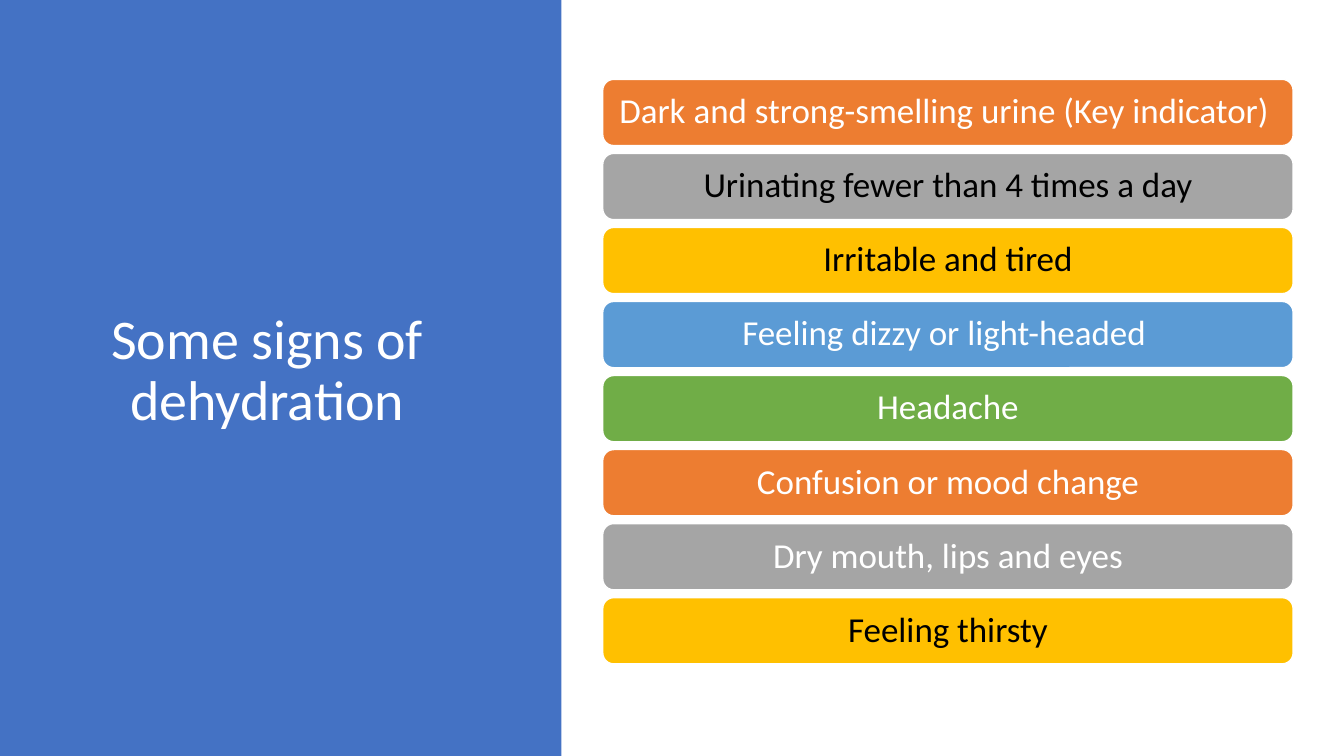
"""Builds a slide listing common signs of dehydration beside a title panel."""
from dataclasses import dataclass

from pptx import Presentation
from pptx.dml.color import RGBColor as Rgb
from pptx.enum.shapes import MSO_SHAPE as Preset
from pptx.enum.text import MSO_ANCHOR as Anchor, PP_ALIGN as Align
from pptx.util import Cm, Pt

TITLE = "Some signs of dehydration"
SIGNS = [
    ("Dark and strong-smelling urine (Key indicator) ", "orange", "white"),
    ("Urinating fewer than 4 times a day", "grey", "black"),
    ("Irritable and tired", "gold", "black"),
    ("Feeling dizzy or light-headed ", "sky", "white"),
    ("Headache", "green", "white"),
    ("Confusion or mood change", "orange", "white"),
    ("Dry mouth, lips and eyes", "grey", "white"),
    ("Feeling thirsty", "gold", "black"),
]


@dataclass(frozen=True)
class Theme:
    """Colours and type sizes of the slide."""
    white: Rgb = Rgb.from_string("FFFFFF")
    black: Rgb = Rgb.from_string("000000")
    blue: Rgb = Rgb.from_string("4472C4")
    orange: Rgb = Rgb.from_string("ED7D31")
    grey: Rgb = Rgb.from_string("A5A5A5")
    gold: Rgb = Rgb.from_string("FFC000")
    sky: Rgb = Rgb.from_string("5B9BD5")
    green: Rgb = Rgb.from_string("70AD47")
    font: str = "Calibri"
    title_size: int = 40
    sign_size: int = 25
    outline: int = 1


THEME = Theme()
SLIDE_W, SLIDE_H = 33.87, 19.05
PANEL_W = 14.15
TITLE_BOX = (1.45, 1.73, 10.57, 15.29)
BAR_X, BAR_W, BAR_H = 15.19, 17.4, 1.67
FIRST_Y, LAST_Y = 2, 15.06
BAR_INSET = 0.33


def write(holder, text, size, colour):
    """Set centred, wrapped text in a box or shape."""
    frame = holder.text_frame
    frame.text = text
    frame.word_wrap = True
    frame.vertical_anchor = Anchor.MIDDLE
    paragraph = frame.paragraphs[0]
    paragraph.alignment = Align.CENTER
    paragraph.line_spacing = 0.9
    font = paragraph.runs[0].font
    font.name, font.size = THEME.font, Pt(size)
    font.color.rgb = colour


def add_block(slide, preset, box, colour):
    """Add a plain filled shape without outline or shadow."""
    block = slide.shapes.add_shape(preset, *map(Cm, box))
    block.shadow.inherit = False
    block.fill.solid()
    block.fill.fore_color.rgb = colour
    block.line.fill.background()
    return block


def add_sign(slide, top, text, fill, ink):
    """Add one rounded bar that carries a sign."""
    bar = add_block(slide, Preset.ROUNDED_RECTANGLE,
                    (BAR_X, top, BAR_W, BAR_H), getattr(THEME, fill))
    bar.line.color.rgb = THEME.white
    bar.line.width = Pt(THEME.outline)
    frame = bar.text_frame
    frame.margin_left = frame.margin_right = Cm(BAR_INSET)
    frame.margin_top = frame.margin_bottom = Cm(BAR_INSET)
    write(bar, text, THEME.sign_size, getattr(THEME, ink))


def main():
    """Lay out the panel, the title and the evenly spaced bars."""
    deck = Presentation()
    deck.slide_width, deck.slide_height = Cm(SLIDE_W), Cm(SLIDE_H)
    slide = deck.slides.add_slide(deck.slide_layouts[6])

    add_block(slide, Preset.RECTANGLE, (0, 0, PANEL_W, SLIDE_H), THEME.blue)
    title = slide.shapes.add_textbox(*map(Cm, TITLE_BOX))
    write(title, TITLE, THEME.title_size, THEME.white)

    pitch = (LAST_Y - FIRST_Y) / (len(SIGNS) - 1)
    for row, sign in enumerate(SIGNS):
        add_sign(slide, FIRST_Y + row * pitch, *sign)

    deck.save("out.pptx")


if __name__ == "__main__":
    main()
